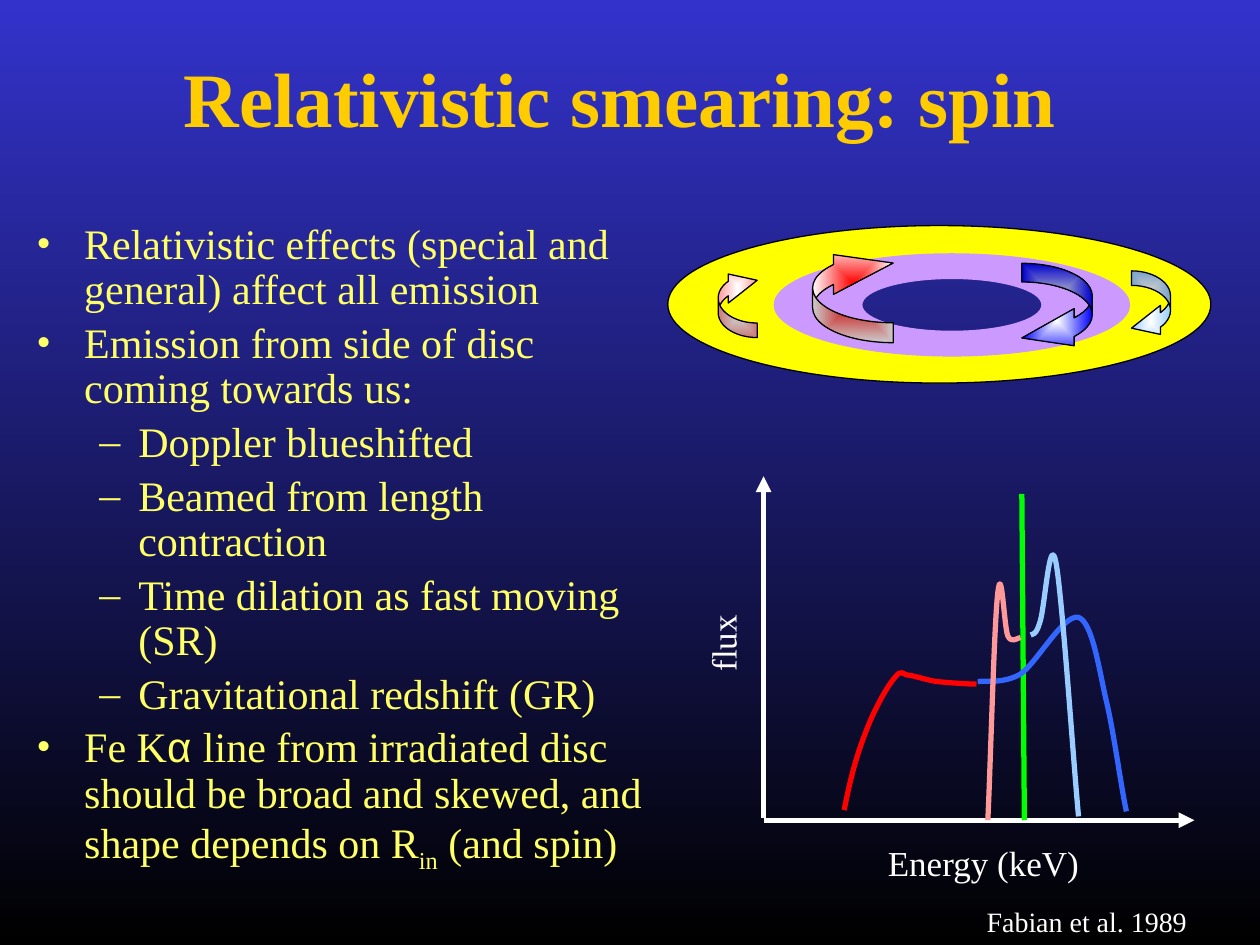
import pptx
import pptx.util
import pptx.dml.color
import pptx.enum.shapes
import pptx.enum.text
import pptx.oxml.ns
from lxml import etree

Inches, Pt = pptx.util.Inches, pptx.util.Pt
RGB = pptx.dml.color.RGBColor
ALIGN = pptx.enum.text.PP_ALIGN
ANCHOR = pptx.enum.text.MSO_ANCHOR
qn = pptx.oxml.ns.qn

FONT = "Times New Roman"
WHITE, BLACK = RGB(255, 255, 255), RGB(0, 0, 0)
NAVY, GOLD, CREAM = RGB(0x33, 0x33, 0xCC), RGB(0xFF, 0xCC, 0), RGB(0xFF, 0xFF, 0x66)
YELLOW, LILAC, GREEN = RGB(255, 255, 0), RGB(0xCC, 0x99, 0xFF), RGB(0, 255, 0)
RED, PINK = RGB(255, 0, 0), RGB(0xFF, 0x99, 0x99)
BLUE, MID_BLUE, SKY = RGB(0, 0, 255), RGB(0x33, 0x66, 0xFF), RGB(0x99, 0xCC, 0xFF)

TITLE = ("Relativistic smearing: spin ", (0.75, 0.14, 8.5, 1.25), 44, GOLD, True, 0)
CITATION = ("Fabian et al. 1989", (7.19, 7.13, 2.87, 0.37), 16, WHITE, False, 0)
X_LABEL = ("Energy (keV)", (6.52, 6.63, 2.57, 0.43), 20, WHITE, False, 0)
Y_LABEL = ("flux", (4.45, 4.89, 2.57, 0.43), 20, WHITE, False, 270)
BULLETS = [
    (0, [("Relativistic effects (special and general) affect all emission", FONT, 0)]),
    (0, [("Emission from side of disc coming towards us:", FONT, 0)]),
    (1, [("Doppler blueshifted", FONT, 0)]),
    (1, [("Beamed from length contraction", FONT, 0)]),
    (1, [("Time dilation as fast moving (SR)", FONT, 0)]),
    (1, [("Gravitational redshift (GR)", FONT, 0)]),
    (0, [("Fe K", FONT, 0), ("α ", "Arial", 0),
         ("line from irradiated disc should be broad and skewed, and shape depends on R", FONT, 0),
         ("in", FONT, -25), (" (and spin)", FONT, 0)]),
]
LEVELS = [("•", 0.38, -0.38), ("–", 0.81, -0.31)]
OUTER_RING = ((7.455, 2.415), (2.155, 0.625), (1.075, 0.315), YELLOW, BLACK)
INNER_RING = ((7.555, 2.42), (1.415, 0.41), (0.71, 0.205), LILAC, None)
OUTER_ARROWS = [
    ((8.98, 2.15, 0.31, 0.57), False, (0.372, 0.744, 0.742), WHITE, SKY),
    ((5.7, 2.11, 0.31, 0.57), True, (0.372, 0.744, 0.742), WHITE, PINK),
]
INNER_ARROWS = [
    ((8.11, 2.09, 0.56, 0.74), False, (0.264, 0.527, 0.742), WHITE, BLUE),
    ((6.45, 1.93, 0.64, 0.79), True, (0.247, 0.493, 0.742), RED, WHITE),
]
LINES = [
    ((6.06, 6.49), (6.06, 3.78), WHITE, True),
    ((6.06, 6.51), (9.48, 6.51), WHITE, True),
    ((8.11, 3.92), (8.13, 6.51), GREEN, False),
]
BROAD_CURVES = [
    (MID_BLUE, [(7.76, 5.41), (7.81, 5.4), (7.96, 5.43), (8.1, 5.35), (8.23, 5.26), (8.44, 4.87),
                (8.56, 4.9), (8.67, 4.94), (8.72, 5.3), (8.78, 5.56), (8.84, 5.81), (8.9, 6.26),
                (8.94, 6.44)]),
    (RED, [(7.75, 5.43), (7.7, 5.43), (7.53, 5.42), (7.44, 5.41), (7.36, 5.4), (7.28, 5.37),
           (7.22, 5.36), (7.16, 5.36), (7.16, 5.3), (7.1, 5.38), (7.03, 5.46), (6.92, 5.67),
           (6.86, 5.84), (6.79, 6.02), (6.74, 6.22), (6.7, 6.43)]),
]
NARROW_CURVES = [
    (PINK, [(8.1, 5.06), (8.08, 5.06), (8.03, 5.11), (8, 5.05), (7.97, 4.99), (7.95, 4.45),
            (7.92, 4.7), (7.89, 4.94), (7.86, 6.13), (7.84, 6.51)]),
    (SKY, [(8.18, 5.04), (8.19, 5.03), (8.22, 5.05), (8.25, 4.95), (8.29, 4.86), (8.33, 4.21),
           (8.38, 4.46), (8.43, 4.71), (8.52, 6.06), (8.56, 6.48)]),
]
K = 0.55
QUADRANTS = [(-1, 0), (-1, -K), (-K, -1), (0, -1), (K, -1), (1, -K), (1, 0),
             (1, K), (K, 1), (0, 1), (-K, 1), (-1, K), (-1, 0)]


def style_outline(sp, color, width):
    sp.shadow.inherit = False
    if color is None:
        sp.line.fill.background()
    else:
        sp.line.color.rgb = color
        sp.line.width = Pt(width)


def set_gradient(fill, colors):
    fill.gradient()
    for stop, color in zip(fill.gradient_stops, colors):
        stop.color.rgb = color


def add_bezier(s, contours, closed):
    fb = None
    for nodes in contours:
        points = [(Inches(x), Inches(y)) for x, y in nodes]
        if fb is None:
            fb = s.shapes.build_freeform(*points[0])
        else:
            fb.move_to(*points[0])
        fb.add_line_segments(points[1:], close=closed)
    sp = fb.convert_to_shape()
    segments = list(sp._element.iter(qn("a:lnTo")))
    for i in range(0, len(segments), 3):
        cubic = etree.Element(qn("a:cubicBezTo"))
        segments[i].addprevious(cubic)
        for segment in segments[i:i + 3]:
            cubic.append(segment[0])
            segment.getparent().remove(segment)
    return sp


def ellipse_nodes(center, radii, direction):
    return [(center[0] + radii[0] * x, center[1] + direction * radii[1] * y)
            for x, y in QUADRANTS]


def add_ring(s, center, outer, inner, color, outline):
    sp = add_bezier(s, [ellipse_nodes(center, outer, 1), ellipse_nodes(center, inner, -1)], True)
    sp.fill.solid()
    sp.fill.fore_color.rgb = color
    style_outline(sp, outline, 0.75)


def add_curve(s, color, nodes):
    sp = add_bezier(s, [nodes], False)
    sp.fill.background()
    style_outline(sp, color, 3)


def add_arrow(s, box, flipped, adjustments, first, last):
    sp = s.shapes.add_shape(pptx.enum.shapes.MSO_SHAPE.CURVED_LEFT_ARROW, *map(Inches, box))
    for i, value in enumerate(adjustments):
        sp.adjustments[i] = value
    set_gradient(sp.fill, (first, last))
    spPr = sp._element.spPr
    grad = spPr.find(qn("a:gradFill"))
    radial = etree.Element(qn("a:path"), {"path": "rect"})
    etree.SubElement(radial, qn("a:fillToRect"), dict.fromkeys("ltrb", "50000"))
    grad.replace(grad.find(qn("a:lin")), radial)
    if flipped:
        xfrm = spPr.find(qn("a:xfrm"))
        xfrm.set("flipH", "1")
        xfrm.set("flipV", "1")
    style_outline(sp, BLACK, 0.75)


def add_line(s, start, end, color, arrow):
    cx = s.shapes.add_connector(pptx.enum.shapes.MSO_CONNECTOR.STRAIGHT,
                                *map(Inches, start + end))
    cx.line.color.rgb = color
    cx.line.width = Pt(3)
    if arrow:
        etree.SubElement(cx.line._get_or_add_ln(), qn("a:tailEnd"), {"type": "triangle"})
    etree.SubElement(cx._element.spPr, qn("a:effectLst"))


def add_text(s, box):
    sp = s.shapes.add_textbox(*map(Inches, box))
    sp.text_frame.word_wrap = True
    return sp, sp.text_frame


def add_run(p, text, size, color, font=FONT, bold=False):
    r = p.add_run()
    r.text = text
    r.font.name, r.font.size, r.font.bold = font, Pt(size), bold
    r.font.color.rgb = color
    return r


def add_label(s, text, box, size, color, bold, rotation):
    sp, tf = add_text(s, box)
    sp.rotation = rotation
    tf.vertical_anchor = ANCHOR.MIDDLE if bold else ANCHOR.TOP
    p = tf.paragraphs[0]
    p.alignment = ALIGN.CENTER
    add_run(p, text, size, color, bold=bold)


def add_bullets(s):
    tf = add_text(s, (0.19, 1.72, 5.06, 4.59))[1]
    for i, (level, runs) in enumerate(BULLETS):
        p = tf.add_paragraph() if i else tf.paragraphs[0]
        char, margin, indent = LEVELS[level]
        pPr = p._p.get_or_add_pPr()
        pPr.set("marL", str(Inches(margin)))
        pPr.set("indent", str(Inches(indent)))
        etree.SubElement(pPr, qn("a:buFont"), {"typeface": FONT})
        etree.SubElement(pPr, qn("a:buChar"), {"char": char})
        p.level = level
        p.line_spacing = 0.9
        p.space_before = Pt(4.8 if i else 0)
        for text, font, baseline in runs:
            r = add_run(p, text, 24, CREAM, font)
            if baseline:
                r.font._element.set("baseline", str(baseline * 1000))


def add_all(add, s, items):
    for item in items:
        add(s, *item)


prs = pptx.Presentation()
prs.slide_width, prs.slide_height = Inches(10), Inches(7.5)
s = prs.slides.add_slide(prs.slide_layouts[6])
set_gradient(s.background.fill, (NAVY, BLACK))
s.background.fill.gradient_angle = 270

add_all(add_label, s, [TITLE, CITATION])
add_ring(s, *OUTER_RING)
add_all(add_line, s, LINES)
add_all(add_curve, s, BROAD_CURVES)
add_label(s, *X_LABEL)
add_all(add_arrow, s, OUTER_ARROWS)
add_ring(s, *INNER_RING)
add_all(add_arrow, s, INNER_ARROWS)
add_all(add_curve, s, NARROW_CURVES)
add_label(s, *Y_LABEL)
add_bullets(s)
prs.save("out.pptx")
